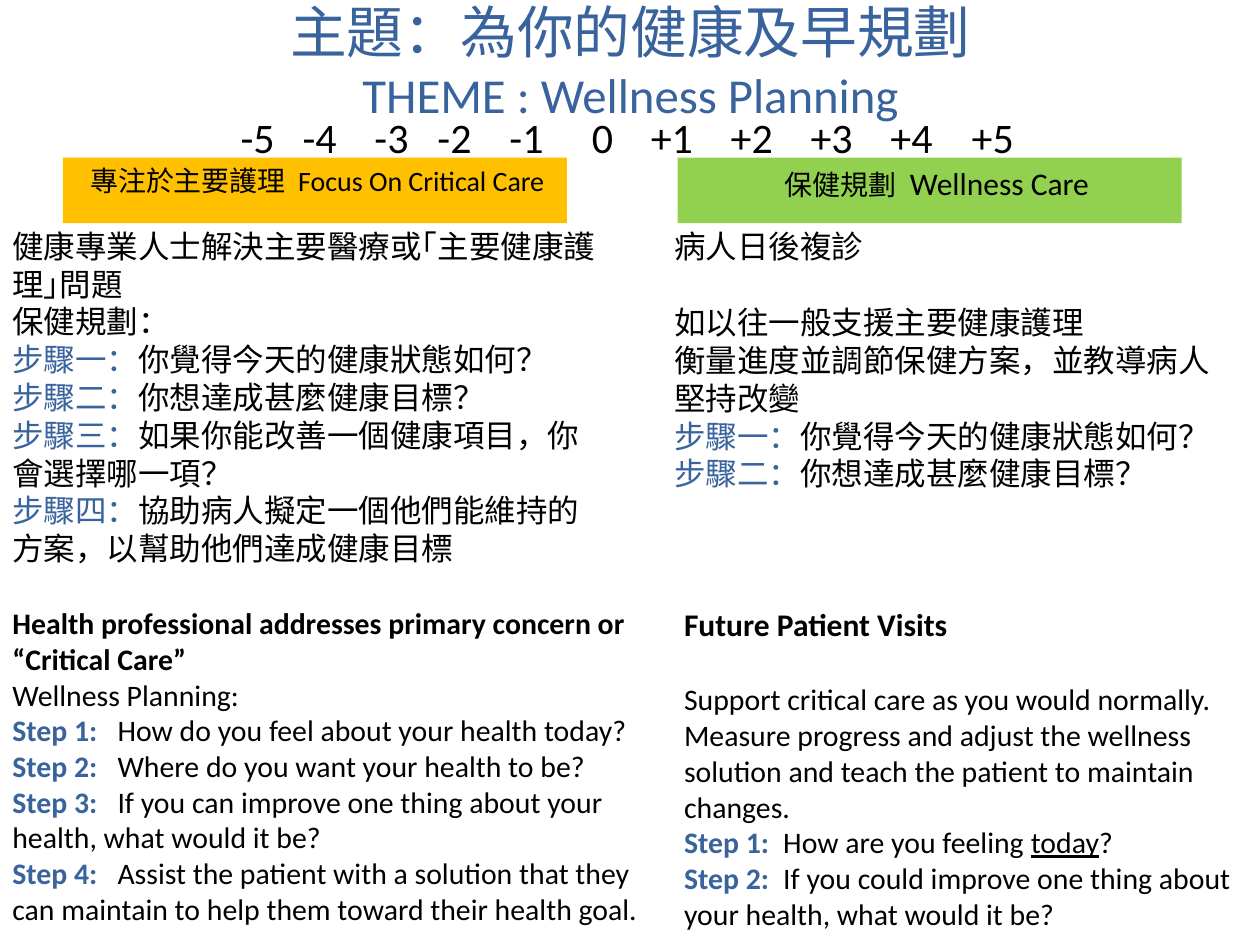
import pptx
import pptx.dml.color
import pptx.enum.shapes
import pptx.enum.text
import pptx.oxml.ns
import pptx.util
from lxml import etree

Cm = pptx.util.Cm
Pt = pptx.util.Pt
ALIGN = pptx.enum.text.PP_ALIGN
ANCHOR = pptx.enum.text.MSO_ANCHOR

BLUE = "39639D"
BLACK = "000000"
LATIN = "Calibri"
CHINESE = "Noto Sans CJK SC"
BLANK_LINE = 22

SCALE_LABELS = ["-5", "-4", "-3", "-2", "-1", "0", "+1", "+2", "+3", "+4", "+5"]
SCALE_STOPS = [1.25, 2.7, 3.97, 5.42, 7.08, 8.27, 9.88, 11.49, 13.1, 14.74]

CHINESE_CARE = [
    "健康專業人士解決主要醫療或｢主要健康護理｣問題",
    "保健規劃：",
    ("步驟一：", "你覺得今天的健康狀態如何？"),
    ("步驟二：", "你想達成甚麼健康目標？"),
    ("步驟三：", "如果你能改善一個健康項目，你會選擇哪一項？"),
    ("步驟四：", "協助病人擬定一個他們能維持的方案，以幫助他們達成健康目標"),
]
CHINESE_VISITS = [
    "病人日後複診",
    "如以往一般支援主要健康護理",
    "衡量進度並調節保健方案，並教導病人堅持改變",
    ("步驟一：", "你覺得今天的健康狀態如何？"),
    ("步驟二：", "你想達成甚麼健康目標？"),
]
ENGLISH_CARE = [
    "Health professional addresses primary concern or “Critical Care”",
    "Wellness Planning:",
    ("Step 1:\t", "How do you feel about your health today?"),
    ("Step 2:\t", "Where do you want your health to be?"),
    ("Step 3:\t", "If you can improve one thing about your health, what would it be?"),
    ("Step 4:\t", "Assist the patient with a solution that they can maintain "
                  "to help them toward their health goal."),
]
ENGLISH_VISITS = [
    "Future Patient Visits",
    "Support critical care as you would normally.",
    "Measure progress and adjust the wellness solution and teach the patient "
    "to maintain changes.",
    ("Step 1:\t", "How are you feeling ", "today", "?"),
    ("Step 2:\t", "If you could improve one thing about your health, what would it be?"),
]


def color(value):
    return pptx.dml.color.RGBColor.from_string(value)


def set_font(font, size, name=LATIN, fill=BLACK):
    font.size = Pt(size)
    font.name = name
    font.color.rgb = color(fill)


def add_run(paragraph, text):
    run = paragraph.add_run()
    run.text = text
    return run


def add_tab_stops(paragraph, positions):
    """Add left tab stops, in cm; call before the paragraph font is set."""
    properties = paragraph._p.get_or_add_pPr()
    tab_list = etree.SubElement(properties, pptx.oxml.ns.qn("a:tabLst"))
    for position in positions:
        etree.SubElement(tab_list, pptx.oxml.ns.qn("a:tab"),
                         pos=str(int(Cm(position))), algn="l")


def add_text_box(slide, left, top, width, height):
    box = slide.shapes.add_textbox(Cm(left), Cm(top), Cm(width), Cm(height))
    box.text_frame.word_wrap = True
    return box.text_frame


def format_title(title):
    title.left, title.top, title.width, title.height = Cm(1.06), Cm(0.64), Cm(23.3), Cm(2.33)
    frame = title.text_frame
    frame.auto_size = pptx.enum.text.MSO_AUTO_SIZE.NONE
    frame.vertical_anchor = ANCHOR.MIDDLE
    frame.margin_bottom = Cm(1.32)
    paragraph = frame.paragraphs[0]
    paragraph.alignment = ALIGN.CENTER
    set_font(add_run(paragraph, "主題：為你的健康及早規劃").font, 32.4, fill=BLUE)
    paragraph.add_line_break()
    set_font(add_run(paragraph, "THEME : Wellness Planning").font, 27.9, fill=BLUE)


def add_scale(slide):
    frame = add_text_box(slide, 0, 2.12, 25.4, 2.74)
    frame.margin_left = Cm(4.85)
    paragraph = frame.paragraphs[0]
    add_tab_stops(paragraph, SCALE_STOPS)
    paragraph.space_before = Pt(4.8)
    set_font(paragraph.font, 24)
    add_run(paragraph, "\t".join(SCALE_LABELS))


def add_heading_bar(slide, left, fill, chinese, english, english_size, alignment):
    bar = slide.shapes.add_shape(pptx.enum.shapes.MSO_SHAPE.RECTANGLE,
                                 Cm(left), Cm(3.18), Cm(10.16), Cm(1.32))
    bar.shadow.inherit = False
    bar.fill.solid()
    bar.fill.fore_color.rgb = color(fill)
    bar.line.fill.background()
    frame = bar.text_frame
    frame.word_wrap = True
    frame.vertical_anchor = ANCHOR.TOP
    paragraph = frame.paragraphs[0]
    paragraph.alignment = alignment
    paragraph.space_before = Pt(4)
    paragraph._p.get_or_add_pPr().set("marL", str(int(Cm(0.3))))
    set_font(add_run(paragraph, chinese + " ").font, 16, CHINESE)
    set_font(add_run(paragraph, " " + english).font, english_size)


def add_column(slide, box, lines, size, heading_size=None, step_stop=None, gap_line=None):
    """Write plain lines and (step label, text...) lines.

    heading_size makes the first line a bold heading and the labels bold;
    step_stop is where step text starts; gap_line follows a blank line's space.
    """
    frame = add_text_box(slide, *box)
    for index, line in enumerate(lines):
        paragraph = frame.paragraphs[0] if index == 0 else frame.add_paragraph()
        is_step = isinstance(line, tuple)
        is_heading = index == 0 and heading_size is not None
        if is_step and step_stop:
            add_tab_stops(paragraph, [step_stop])
        if index == gap_line:
            paragraph.space_before = Pt(BLANK_LINE)
        set_font(paragraph.font, heading_size if is_heading else size)
        paragraph.font.bold = is_heading
        runs = [add_run(paragraph, text) for text in (line if is_step else [line])]
        if is_step:
            runs[0].font.color.rgb = color(BLUE)
            runs[0].font.bold = heading_size is not None
        for run in runs:
            if run.text == "today":
                run.font.underline = True
    return frame


def main():
    presentation = pptx.Presentation()
    presentation.slide_width = Cm(25.4)
    presentation.slide_height = Cm(19.05)
    slide = presentation.slides.add_slide(presentation.slide_layouts[5])

    format_title(slide.shapes.title)
    add_scale(slide)
    add_heading_bar(slide, 1.27, "FFC000", "專注於主要護理",
                    "Focus On Critical Care", 16, ALIGN.LEFT)
    add_heading_bar(slide, 13.66, "92D050", "保健規劃", "Wellness Care", 18, ALIGN.CENTER)

    add_column(slide, (0, 4.45, 12.5, 7.62), CHINESE_CARE, 18)
    add_column(slide, (13.34, 4.45, 11.86, 8.38), CHINESE_VISITS, 18, gap_line=1)
    add_column(slide, (0, 12.07, 13.34, 7.42), ENGLISH_CARE, 17,
               heading_size=17, step_stop=2.12)
    visits = add_column(slide, (13.54, 12.07, 11.86, 6.88), ENGLISH_VISITS, 17,
                        heading_size=18, step_stop=2, gap_line=1)
    visits.auto_size = pptx.enum.text.MSO_AUTO_SIZE.SHAPE_TO_FIT_TEXT

    presentation.save("out.pptx")


if __name__ == "__main__":
    main()
